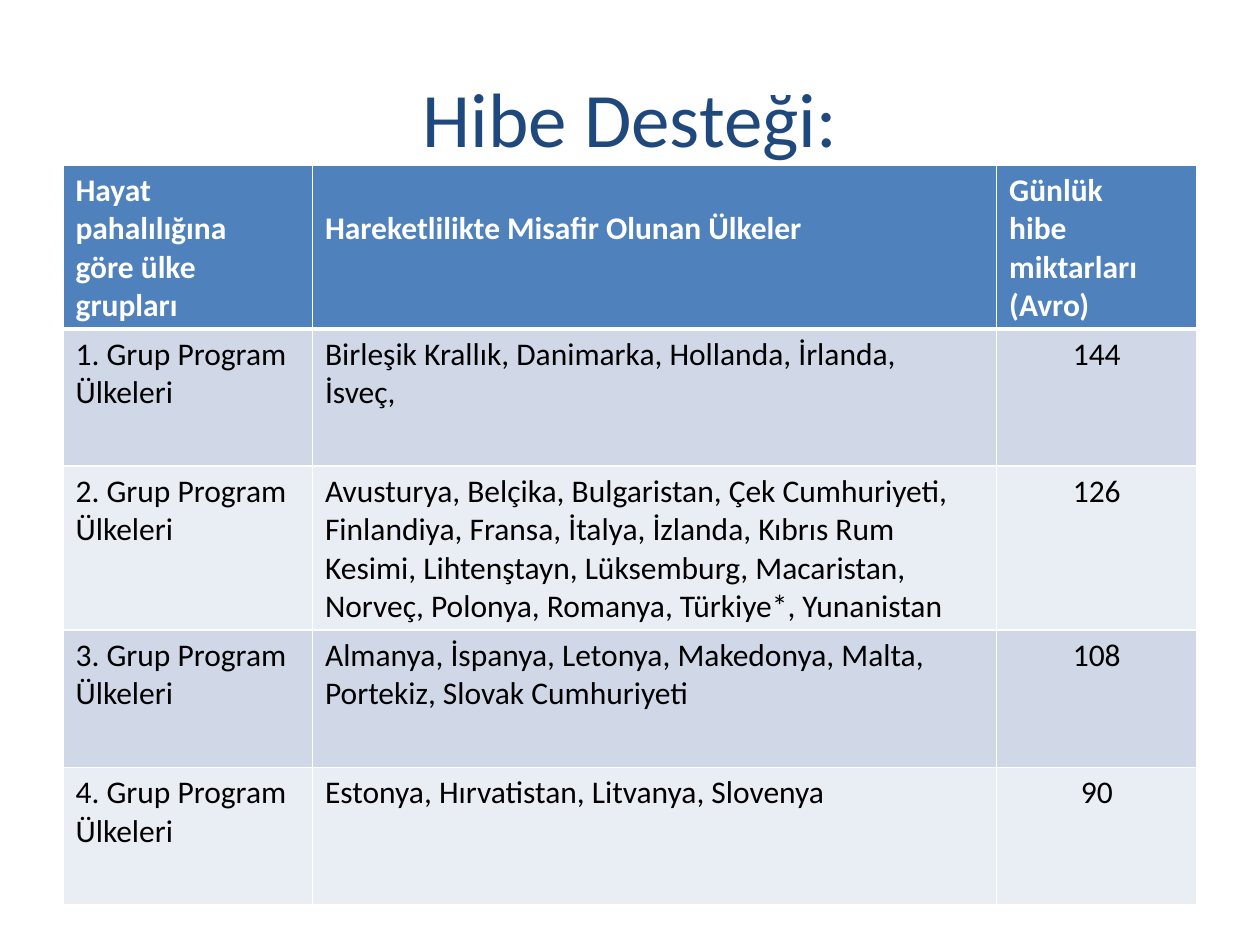
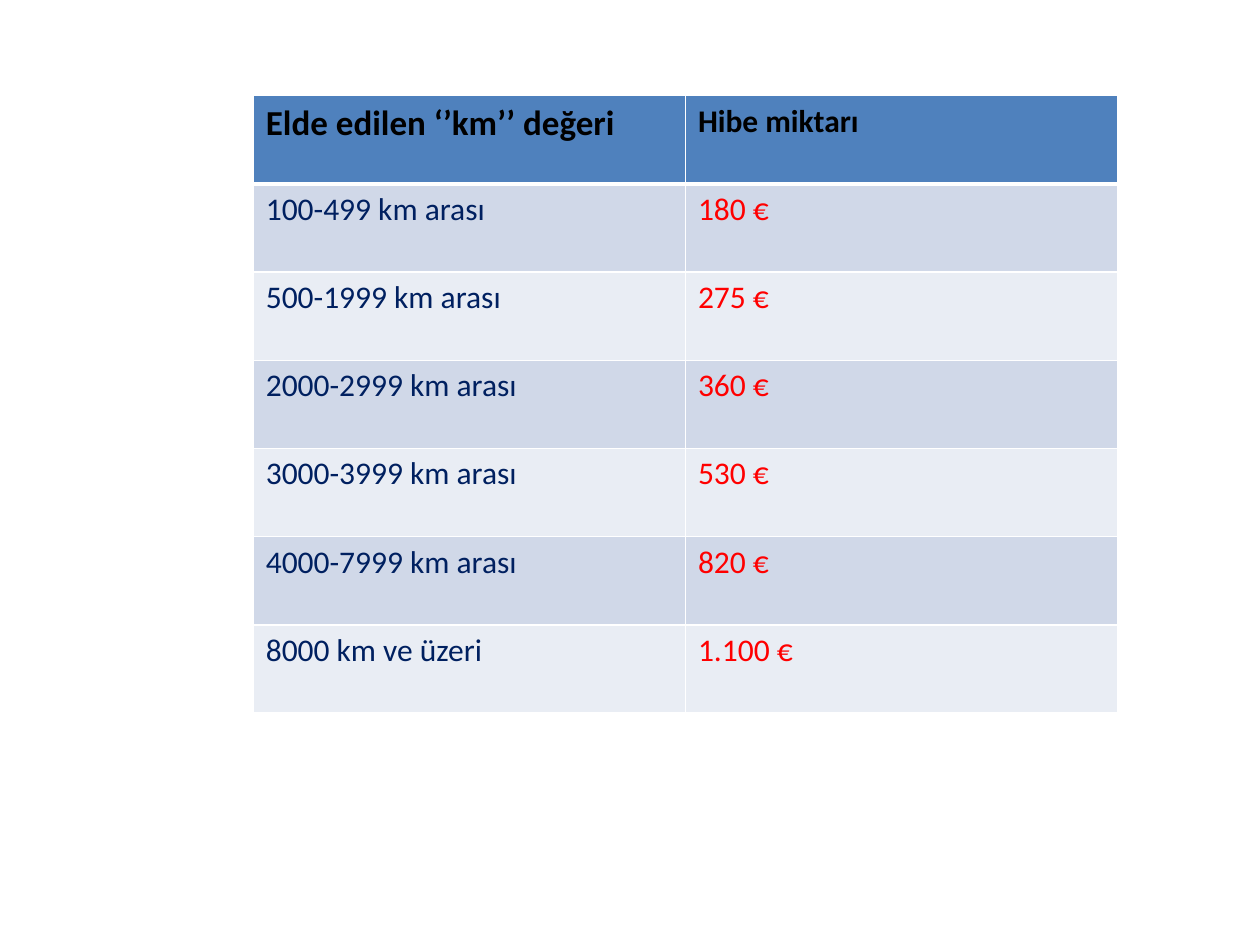
from lxml.etree import SubElement
from pptx import Presentation
from pptx.dml.color import RGBColor
from pptx.enum.text import MSO_ANCHOR, PP_ALIGN
from pptx.oxml.ns import qn
from pptx.util import Inches, Pt

COLORS = {
    "title": "1F497D", "header": "4F81BD", "band_dark": "D0D8E8",
    "band_light": "E9EDF4", "white": "FFFFFF", "black": "000000",
    "distance": "002060", "amount": "FF0000",
}
FONT = "Calibri"

GRANT_HEADERS = [
    "Hayat pahalılığına\ngöre ülke grupları",
    "Hareketlilikte Misafir Olunan Ülkeler",
    "Günlük\nhibe\nmiktarları\n(Avro)",
]
COUNTRY_GROUPS = [
    ("Birleşik Krallık, Danimarka, Hollanda, İrlanda,\nİsveç,", "144"),
    ("Avusturya, Belçika, Bulgaristan, Çek Cumhuriyeti,\n"
     "Finlandiya, Fransa, İtalya, İzlanda, Kıbrıs Rum\n"
     "Kesimi, Lihtenştayn, Lüksemburg, Macaristan,\n"
     "Norveç, Polonya, Romanya, Türkiye*, Yunanistan", "126"),
    ("Almanya, İspanya, Letonya, Makedonya, Malta,\nPortekiz, Slovak Cumhuriyeti", "108"),
    ("Estonya, Hırvatistan, Litvanya, Slovenya", "90"),
]
DISTANCE_HEADERS = ["Elde edilen ‘’km’’ değeri", "Hibe miktarı"]
DISTANCE_GRANTS = [
    ("100-499 km arası", "180 €"),
    ("500-1999 km arası", "275 €"),
    ("2000-2999 km arası", "360 €"),
    ("3000-3999 km arası", "530 €"),
    ("4000-7999 km arası", "820 €"),
    ("8000 km ve üzeri", "1.100 €"),
]


def write_text(frame, text, size=18, color="black", bold=False, align=PP_ALIGN.LEFT):
    for index, line in enumerate(text.split("\n")):
        paragraph = frame.add_paragraph() if index else frame.paragraphs[0]
        paragraph.alignment = align
        run = paragraph.add_run()
        run.text = line
        run.font.name = FONT
        run.font.size = Pt(size)
        run.font.bold = bold
        run.font.color.rgb = RGBColor.from_string(COLORS[color])


def add_borders(cell, top=1, bottom=1):
    properties = cell._tc.get_or_add_tcPr()
    for side, width in (("L", 1), ("R", 1), ("T", top), ("B", bottom)):
        line = SubElement(properties, qn(f"a:ln{side}"), w=str(Pt(width)))
        fill = SubElement(line, qn("a:solidFill"))
        SubElement(fill, qn("a:srgbClr"), val=COLORS["white"])


def add_grid(slide, box, widths, row_height, rows, header_formats, body_formats):
    left, top, width, height = map(Inches, box)
    grid = slide.shapes.add_table(len(rows), len(widths), left, top, width, height).table
    for column, column_width in zip(grid.columns, widths):
        column.width = Inches(column_width)
    for index, values in enumerate(rows):
        grid.rows[index].height = Inches(row_height)
        formats = body_formats if index else header_formats
        band = "header" if index == 0 else "band_dark" if index % 2 else "band_light"
        for cell, value, text_format in zip(grid.rows[index].cells, values, formats):
            write_text(cell.text_frame, value, **text_format)
            add_borders(cell, top=3 if index == 1 else 1, bottom=1 if index else 3)
            cell.fill.solid()
            cell.fill.fore_color.rgb = RGBColor.from_string(COLORS[band])
    return grid


def add_title(slide, text, box):
    frame = slide.shapes.add_textbox(*map(Inches, box)).text_frame
    frame.word_wrap = True
    frame.vertical_anchor = MSO_ANCHOR.MIDDLE
    write_text(frame, text, size=44, color="title", align=PP_ALIGN.CENTER)


def build_country_grants(slide):
    add_title(slide, "Hibe Desteği:", (0.5, 0.3, 9, 1.25))
    rows = [GRANT_HEADERS] + [
        (f"{number}. Grup Program\nÜlkeleri", countries, amount)
        for number, (countries, amount) in enumerate(COUNTRY_GROUPS, 1)
    ]
    grid = add_grid(
        slide, (0.5, 1.31, 9, 5.45), (1.98, 5.43, 1.59), 1.09, rows,
        [{"color": "white", "bold": True}] * 3,
        [{}, {}, {"align": PP_ALIGN.CENTER}],
    )
    grid.cell(0, 1).margin_top = Inches(0.35)


def build_distance_grants(slide):
    add_grid(
        slide, (2.01, 0.76, 6.86, 4.9), (3.43, 3.43), 0.7,
        [DISTANCE_HEADERS] + DISTANCE_GRANTS,
        [{"size": 20, "bold": True}, {"bold": True}],
        [{"color": "distance"}, {"color": "amount"}],
    )


def main():
    deck = Presentation()
    deck.slide_width, deck.slide_height = Inches(10), Inches(7.5)
    for build in (build_country_grants, build_distance_grants):
        build(deck.slides.add_slide(deck.slide_layouts[6]))
    deck.save("out.pptx")


if __name__ == "__main__":
    main()
